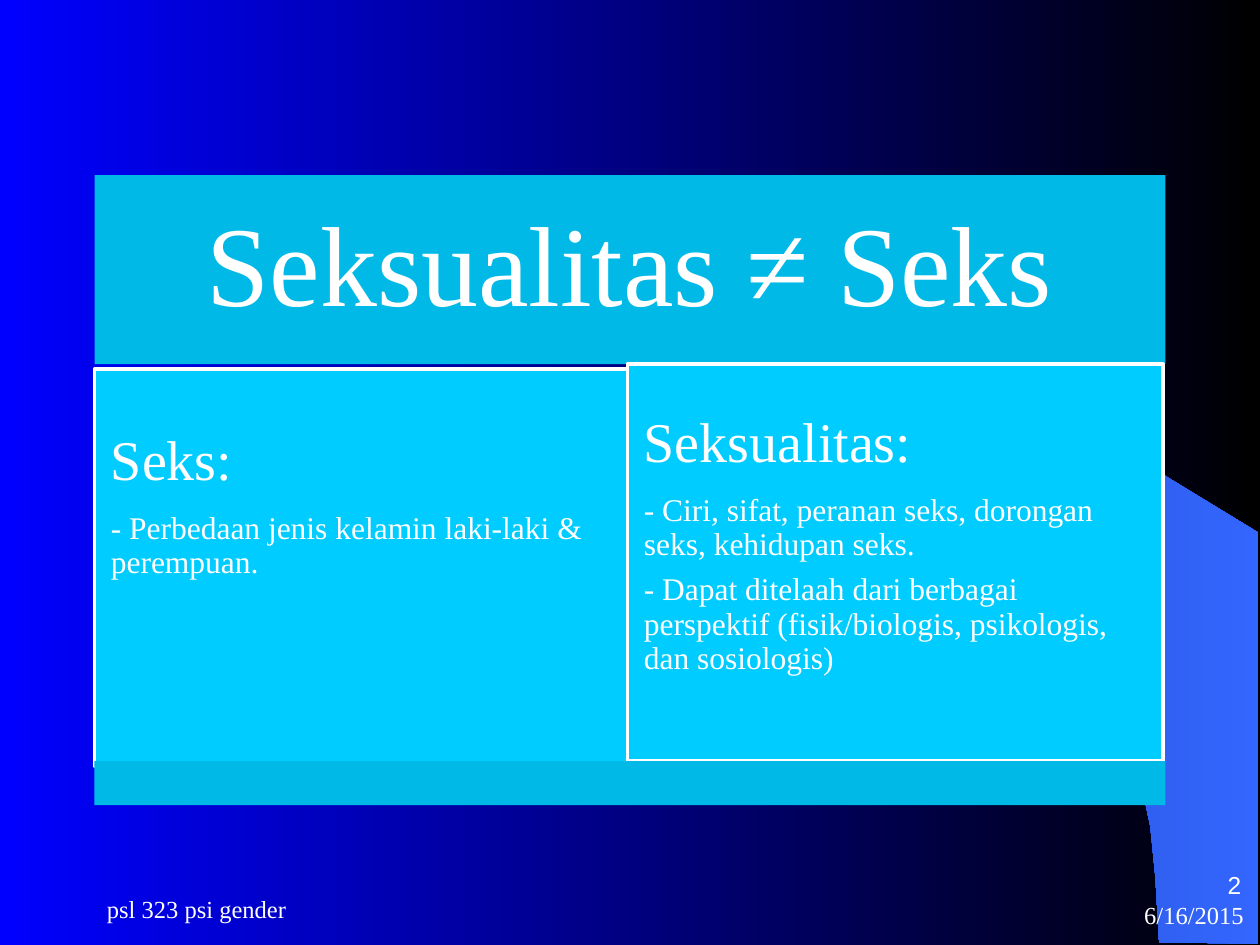
from pptx import Presentation
from pptx.dml.color import RGBColor
from pptx.enum.shapes import MSO_SHAPE
from pptx.enum.text import MSO_ANCHOR as Anchor, PP_ALIGN as Align
from pptx.util import Inches, Pt

SERIF = "Times New Roman"
WHITE, BAND, PANEL = "FFFFFF", "00B9E7", "00CCFF"
LEFT, WIDTH = 0.75, 8.5

# Curved wedge on the right: straight edges first, then the arc
WEDGE = [(9.2, 7.48), (9.99, 7.49), (9.99, 4.23), (5.89, 1.73), (6.24, 1.99),
         (6.53, 2.22), (6.85, 2.5), (7.16, 2.8), (7.62, 3.3), (8.03, 3.84),
         (8.32, 4.31), (8.58, 4.79), (8.78, 5.28), (8.93, 5.72),
         (9.03, 6.09), (9.13, 6.56), (9.17, 6.96)]


def color(hex_value):
    return RGBColor.from_string(hex_value)


def fill_gradient(fill, start, end):
    fill.gradient()
    fill.gradient_angle = 0
    for stop, hex_value in zip(fill.gradient_stops, (start, end)):
        stop.color.rgb = color(hex_value)


def format_paragraph(paragraph, size, font=SERIF, align=Align.LEFT):
    paragraph.alignment = align
    paragraph.font.size = Pt(size)
    paragraph.font.name = font
    paragraph.font.color.rgb = color(WHITE)


def add_backdrop(slide):
    fill_gradient(slide.background.fill, "0000FF", "000000")
    points = [(Inches(x), Inches(y)) for x, y in WEDGE]
    builder = slide.shapes.build_freeform(*points[0])
    builder.add_line_segments(points[1:], close=True)
    wedge = builder.convert_to_shape()
    wedge.shadow.inherit = False
    fill_gradient(wedge.fill, "2449B6", "3366FF")
    wedge.line.fill.background()
    # Send behind the title
    slide.shapes._spTree.insert(2, wedge._element)


def add_title(slide, text, left, top, width, height):
    title = slide.shapes.title
    title.left, title.top = Inches(left), Inches(top)
    title.width, title.height = Inches(width), Inches(height)
    title.fill.solid()
    title.fill.fore_color.rgb = color(BAND)
    title.text_frame.text = text
    title.text_frame.vertical_anchor = Anchor.MIDDLE
    paragraph = title.text_frame.paragraphs[0]
    format_paragraph(paragraph, 65, align=Align.CENTER)
    paragraph.line_spacing = 0.9


def add_box(slide, fill, left, top, width, height):
    box = slide.shapes.add_shape(MSO_SHAPE.RECTANGLE, Inches(left), Inches(top),
                                 Inches(width), Inches(height))
    box.shadow.inherit = False
    box.fill.solid()
    box.fill.fore_color.rgb = color(fill)
    box.line.fill.background()
    return box


def add_panel(slide, heading, points, text_top, left, top, width, height):
    panel = add_box(slide, PANEL, left, top, width, height)
    panel.line.color.rgb = color(WHITE)
    panel.line.width = Pt(2)
    frame = panel.text_frame
    frame.word_wrap = True
    frame.vertical_anchor = Anchor.TOP
    frame.margin_left = frame.margin_right = Inches(0.13)
    frame.margin_top = Inches(text_top)
    frame.text = "\n".join([heading, *points])
    for index, paragraph in enumerate(frame.paragraphs):
        size = 18 if index else 32
        format_paragraph(paragraph, size)
        paragraph.line_spacing = 0.9
        paragraph.space_after = Pt(round(0.35 * size, 1))


def add_footer(slide, text, left, top, width, height, font=SERIF,
               align=Align.RIGHT, anchor=Anchor.MIDDLE, margin=0.05):
    frame = slide.shapes.add_textbox(Inches(left), Inches(top), Inches(width),
                                     Inches(height)).text_frame
    frame.word_wrap = True
    frame.vertical_anchor = anchor
    frame.margin_top = frame.margin_bottom = Inches(margin)
    frame.text = text
    format_paragraph(frame.paragraphs[0], 14, font, align)


def main():
    prs = Presentation()
    prs.slide_width, prs.slide_height = Inches(10), Inches(7.5)
    slide = prs.slides.add_slide(prs.slide_layouts[5])
    add_backdrop(slide)

    # Comparison: heading band, two panels, closing band
    add_title(slide, "Seksualitas ≠ Seks", LEFT, 1.39, WIDTH, 1.5)
    add_panel(slide, "Seks:",
              ["- Perbedaan jenis kelamin laki-laki & perempuan."],
              0.5, LEFT, 2.93, WIDTH / 2, 3.15)
    add_panel(slide, "Seksualitas:",
              ["- Ciri, sifat, peranan seks, dorongan seks, kehidupan seks.",
               "- Dapat ditelaah dari berbagai perspektif "
               "(fisik/biologis, psikologis, dan sosiologis)"],
              0.4, 4.98, 2.89, WIDTH / 2, 3.15)
    add_box(slide, BAND, LEFT, 6.04, WIDTH, 0.35)

    # Footer: date, course and slide number
    add_footer(slide, "6/16/2015", 7.89, 7.05, 2.08, 0.42)
    add_footer(slide, "psl 323 psi gender", LEFT, 6.96, 4.67, 0.5,
               align=Align.LEFT)
    add_footer(slide, "2", 7.87, 6.72, 2.08, 0.42, font="Arial",
               anchor=Anchor.BOTTOM, margin=0)

    prs.save("out.pptx")


if __name__ == "__main__":
    main()
